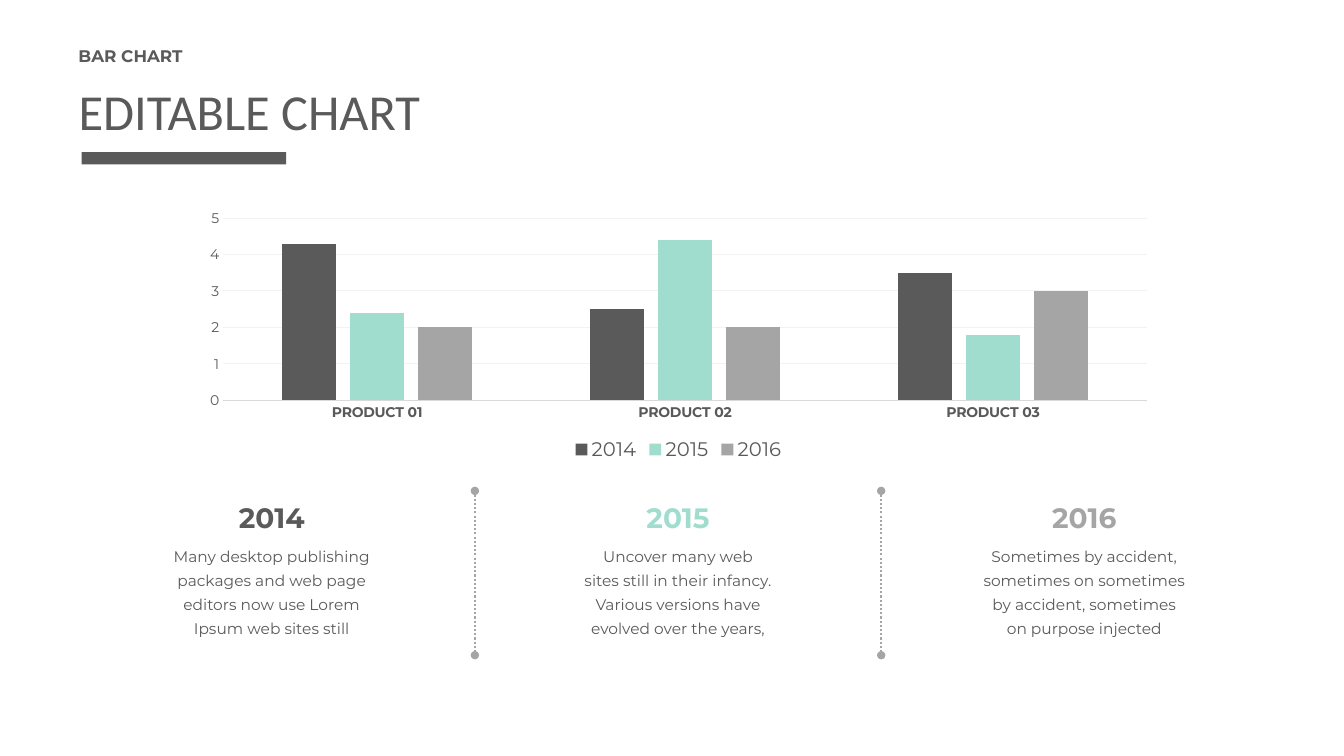
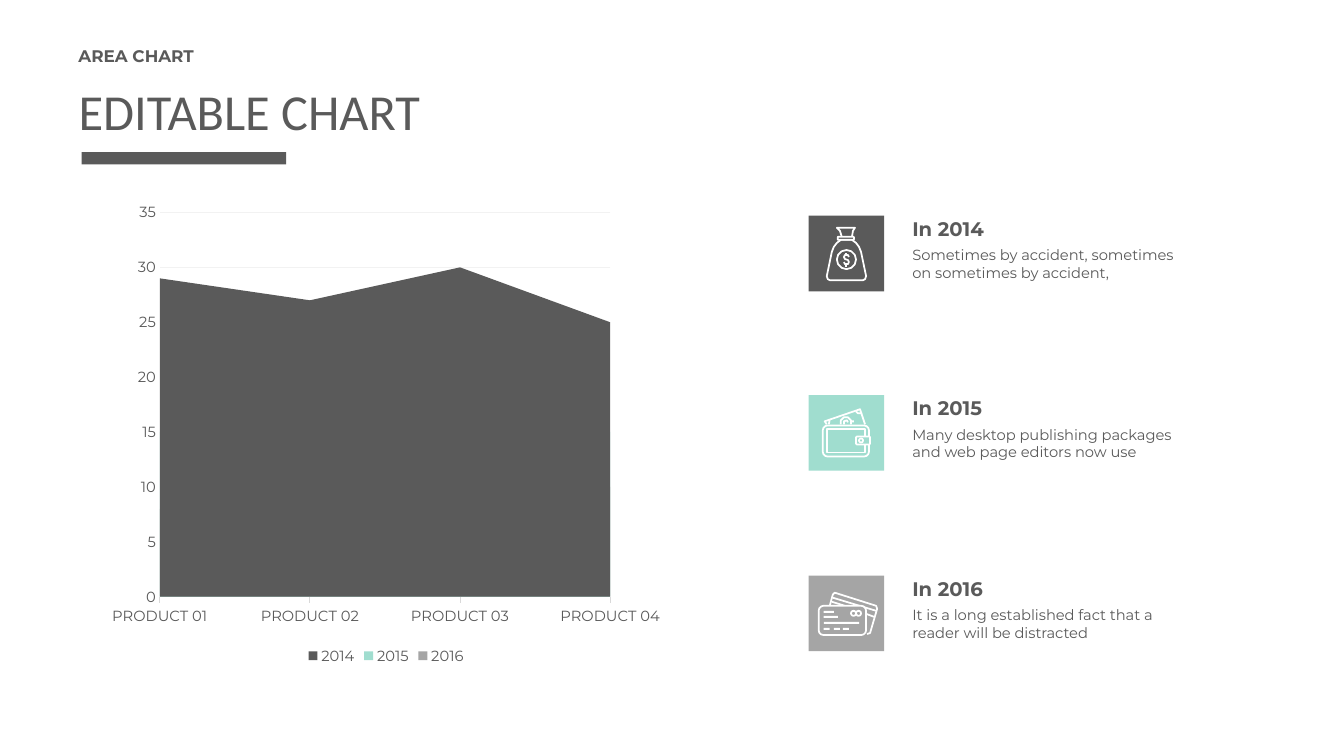
import copy
import dataclasses

import lxml.etree
import pptx
import pptx.chart.data
import pptx.dml.color
import pptx.enum.chart
import pptx.enum.dml
import pptx.enum.shapes
import pptx.enum.text
import pptx.oxml.ns
import pptx.util

SCALE = 9144
SHAPES = pptx.enum.shapes.MSO_SHAPE
ALIGN = pptx.enum.text.PP_ALIGN
ANCHOR = pptx.enum.text.MSO_ANCHOR
CHARTS = pptx.enum.chart.XL_CHART_TYPE
TICKS = pptx.enum.chart.XL_TICK_MARK
qn = pptx.oxml.ns.qn


@dataclasses.dataclass(frozen=True)
class Theme:
    dark: str = "5A5A5A"
    mint: str = "A0DDCF"
    gray: str = "A5A5A5"
    white: str = "FFFFFF"
    axis_text: str = "595959"
    axis_line: str = "D9D9D9"
    grid: str = "F2F2F2"
    title_font: str = "Calibri"
    body_font: str = "Montserrat"
    title_size: float = 36
    section_size: float = 12
    year_size: float = 20
    body_size: float = 11
    label_size: float = 14
    small_size: float = 10.5
    axis_size: float = 10
    hairline: float = 0.75
    stroke: float = 1.25
    divider: float = 1.5

    @property
    def series(self):
        return self.dark, self.mint, self.gray


THEME = Theme()


def px(*lengths):
    return [pptx.util.Emu(length * SCALE) for length in lengths]


def rgb(value):
    return pptx.dml.color.RGBColor.from_string(value)


def format_font(font, size, color, name=THEME.body_font, bold=False):
    font.size = pptx.util.Pt(size)
    font.name = name
    font.bold = bold
    font.color.rgb = rgb(color)


def format_line(line, color, width):
    line.color.rgb = rgb(color)
    line.width = pptx.util.Pt(width)


def write_text(frame, text, size, color=THEME.dark, name=THEME.body_font, bold=False,
               align=ALIGN.LEFT, spacing=1.0, anchor=ANCHOR.TOP, insets=(10, 5, 10, 5)):
    frame.word_wrap = True
    frame.auto_size = pptx.enum.text.MSO_AUTO_SIZE.NONE
    frame.vertical_anchor = anchor
    (frame.margin_left, frame.margin_top,
     frame.margin_right, frame.margin_bottom) = px(*insets)
    paragraph = frame.paragraphs[0]
    paragraph.text = text
    paragraph.alignment = align
    paragraph.line_spacing = spacing
    for run in paragraph.runs:
        format_font(run.font, size, color, name, bold)
    for line_break in paragraph._p.findall(qn("a:br")):
        line_break.append(copy.deepcopy(paragraph.runs[0]._r.rPr))


class Deck:
    def __init__(self, theme):
        self.theme = theme
        self.presentation = pptx.Presentation()
        self.presentation.slide_width, self.presentation.slide_height = px(1333, 750)
        self.slide = None

    def start_slide(self, section, title):
        theme = self.theme
        self.slide = self.presentation.slides.add_slide(self.presentation.slide_layouts[5])
        self.shape(SHAPES.RECTANGLE, 81, 151, 203, 12, fill=theme.dark)
        holder = self.slide.shapes.title
        holder.left, holder.top, holder.width, holder.height = px(68, 69, 1197, 70)
        write_text(holder.text_frame, title, theme.title_size, name=theme.title_font,
                   anchor=ANCHOR.BOTTOM, insets=(10, 5, 10, 0))
        self.text(section, 68, 40, 1197, 34, size=theme.section_size, bold=True)

    def text(self, text, left, top, width, height, **style):
        box = self.slide.shapes.add_textbox(*px(left, top, width, height))
        write_text(box.text_frame, text, **style)

    def paint(self, shape, fill=None, outline=None):
        shape.shadow.inherit = False
        if fill:
            shape.fill.solid()
            shape.fill.fore_color.rgb = rgb(fill)
        else:
            shape.fill.background()
        if outline:
            format_line(shape.line, outline, self.theme.stroke)
        else:
            shape.line.fill.background()

    def shape(self, kind, left, top, width, height, fill=None, outline=None):
        shape = self.slide.shapes.add_shape(kind, *px(left, top, width, height))
        self.paint(shape, fill, outline)

    def outline(self, points, close=False):
        builder = self.slide.shapes.build_freeform(*points[0], scale=SCALE)
        builder.add_line_segments(points[1:], close=close)
        self.paint(builder.convert_to_shape(), outline=self.theme.white)

    def divider(self, left, top, bottom):
        connector = self.slide.shapes.add_connector(
            pptx.enum.shapes.MSO_CONNECTOR.STRAIGHT, *px(left, top, left, bottom))
        format_line(connector.line, self.theme.gray, self.theme.divider)
        connector.line.dash_style = pptx.enum.dml.MSO_LINE.ROUND_DOT
        properties = connector._element.spPr
        for end in ("a:headEnd", "a:tailEnd"):
            lxml.etree.SubElement(properties.find(qn("a:ln")), qn(end), type="oval")
        lxml.etree.SubElement(properties, qn("a:effectLst"))

    def chart(self, kind, place, categories, series, maximum, step,
              axis_size, legend_size, bold_categories=False, category_tick=TICKS.NONE):
        theme = self.theme
        data = pptx.chart.data.CategoryChartData()
        data.categories = categories
        for name, values in series.items():
            data.add_series(name, values)
        chart = self.slide.shapes.add_chart(kind, *px(*place), data).chart
        chart.has_title = False
        format_font(chart.font, axis_size, theme.axis_text)
        chart.has_legend = True
        chart.legend.position = pptx.enum.chart.XL_LEGEND_POSITION.BOTTOM
        chart.legend.include_in_layout = False
        format_font(chart.legend.font, legend_size, theme.axis_text)

        category_axis, value_axis = chart.category_axis, chart.value_axis
        category_axis.major_tick_mark = category_tick
        category_axis.has_major_gridlines = False
        format_line(category_axis.format.line, theme.axis_line, theme.hairline)
        format_font(category_axis.tick_labels.font, axis_size, theme.axis_text,
                    bold=bold_categories)
        value_axis.minimum_scale, value_axis.maximum_scale = 0, maximum
        value_axis.major_unit = step
        value_axis.major_tick_mark = TICKS.NONE
        value_axis.format.line.fill.background()
        value_axis.has_major_gridlines = True
        format_line(value_axis.major_gridlines.format.line, theme.grid, theme.hairline)
        format_font(value_axis.tick_labels.font, axis_size, theme.axis_text)
        value_axis.tick_labels.number_format = "General"
        value_axis.tick_labels.number_format_is_linked = False

        plot = chart.plots[0]
        plot.vary_by_categories = False
        for item, color in zip(plot.series, theme.series):
            item.format.fill.solid()
            item.format.fill.fore_color.rgb = rgb(color)
        return chart

    def icon(self, left, top, background, parts):
        white = self.theme.white
        self.shape(SHAPES.RECTANGLE, left, top, 75, 75, fill=background)
        for kind, *values in parts:
            if kind in ("open", "closed"):
                points = [(left + x, top + y) for x, y in values]
                self.outline(points, close=kind == "closed")
                continue
            x, y, width, height = values
            place = left + x, top + y, width, height
            if kind == "bar":
                self.shape(SHAPES.RECTANGLE, *place, fill=white)
            else:
                preset = {"rect": SHAPES.RECTANGLE, "round": SHAPES.ROUNDED_RECTANGLE,
                          "oval": SHAPES.OVAL}[kind]
                self.shape(preset, *place, fill=background, outline=white)


MONEY_BAG = [
    ("closed", (32, 24), (28, 27), (25, 31), (23, 36), (18, 60), (19, 63), (21, 64),
     (54, 64), (56, 63), (57, 60), (52, 36), (50, 31), (47, 27), (43, 24)),
    ("closed", (28, 12), (46, 12), (44, 15), (43, 21), (33, 21), (31, 15)),
    ("round", 29, 21, 16, 3),
    ("oval", 28, 34, 19, 19),
    ("open", (40, 41), (39, 39), (36, 39), (35, 41), (36, 43), (39, 44),
     (40, 46), (39, 48), (36, 48), (35, 46)),
    ("open", (37, 37), (37, 39)),
    ("open", (37, 48), (37, 51)),
]

WALLET = [
    ("open", (18, 29), (16, 26), (51, 14), (56, 29)),
    ("open", (47, 16), (49, 18), (53, 18)),
    ("open", (21, 24), (20, 29)),
    ("open", (32, 29), (32, 25), (35, 22), (39, 22), (42, 25), (42, 29)),
    ("open", (35, 29), (35, 26), (38, 25), (39, 27)),
    ("bar", 43, 25, 2, 2),
    ("round", 14, 30, 46, 31),
    ("rect", 18, 34, 38, 23),
    ("round", 47, 41, 14, 8),
    ("oval", 50, 43, 4, 4),
]

CARDS = [
    ("open", (21, 30), (24, 19), (26, 17), (67, 30), (68, 33), (61, 57), (58, 58)),
    ("open", (24, 22), (67, 35)),
    ("open", (23, 26), (36, 30)),
    ("open", (57, 38), (65, 41)),
    ("round", 10, 30, 47, 29),
    ("bar", 15, 35, 10, 2),
    ("bar", 15, 40, 14, 2),
    ("bar", 15, 46, 35, 2),
    *[("bar", left, 52, 6, 2) for left in (15, 25, 34)],
    *[("oval", left, 35, 5, 5) for left in (42, 47)],
]


def add_bar_slide(deck):
    theme = deck.theme
    deck.start_slide("BAR CHART", "EDITABLE CHART")
    chart = deck.chart(
        CHARTS.COLUMN_CLUSTERED, (189, 203, 968, 259),
        ["PRODUCT 01", "PRODUCT 02", "PRODUCT 03"],
        {"2014": (4.3, 2.5, 3.5), "2015": (2.4, 4.4, 1.8), "2016": (2, 2, 3)},
        maximum=5, step=1, axis_size=theme.axis_size, legend_size=theme.label_size,
        bold_categories=True)
    chart.plots[0].gap_width = 219
    chart.plots[0].overlap = -27

    years = [
        ("2014", "Many desktop publishing packages and web page editors now use "
                 "Lorem Ipsum web sites still"),
        ("2015", "Uncover many web\vsites still in their infancy. Various versions "
                 "have evolved over the years,"),
        ("2016", "Sometimes by accident, sometimes on sometimes by accident, "
                 "sometimes on purpose injected"),
    ]
    pitch = 403
    for index, (year, description) in enumerate(years):
        left = 159 + pitch * index
        deck.text(description, left, 533, 221, 117, size=theme.body_size,
                  align=ALIGN.CENTER, spacing=1.3, insets=(10, 4, 10, 5))
        deck.text(year, left, 487, 221, 47, size=theme.year_size, bold=True,
                  color=theme.series[index], align=ALIGN.CENTER, spacing=1.3,
                  insets=(10, 0, 10, 5))
    for index in range(len(years) - 1):
        deck.divider(471 + pitch * index, 487, 650)


def add_area_slide(deck):
    theme = deck.theme
    deck.start_slide("AREA CHART", "EDITABLE CHART")
    chart = deck.chart(
        CHARTS.AREA, (100, 192, 566, 472),
        ["PRODUCT 01", "PRODUCT 02", "PRODUCT 03", "PRODUCT 04"],
        {"2014": (29, 27, 30, 25), "2015": (15, 18, 20, 15), "2016": (8, 13, 14, 10)},
        maximum=35, step=5, axis_size=theme.small_size, legend_size=theme.small_size,
        category_tick=TICKS.OUTSIDE)
    for crossing in chart._chartSpace.iter(qn("c:crossBetween")):
        crossing.set("val", "midCat")

    items = [
        ("In 2014", "Sometimes by accident, sometimes on sometimes by accident,", MONEY_BAG),
        ("In 2015", "Many desktop publishing packages and web page editors now use", WALLET),
        ("In 2016", "It is a long established fact that a reader will be distracted", CARDS),
    ]
    for index, (label, description, parts) in enumerate(items):
        top = 214 + 357 * index // 2
        deck.icon(802, top, theme.series[index], parts)
        deck.text(description, 895, top + 30, 292, 45, size=theme.small_size,
                  insets=(10, 0, 10, 5))
        deck.text(label, 895, top - 4, 292, 34, size=theme.label_size, bold=True)


def main():
    deck = Deck(THEME)
    add_bar_slide(deck)
    add_area_slide(deck)
    deck.presentation.save("out.pptx")


if __name__ == "__main__":
    main()
